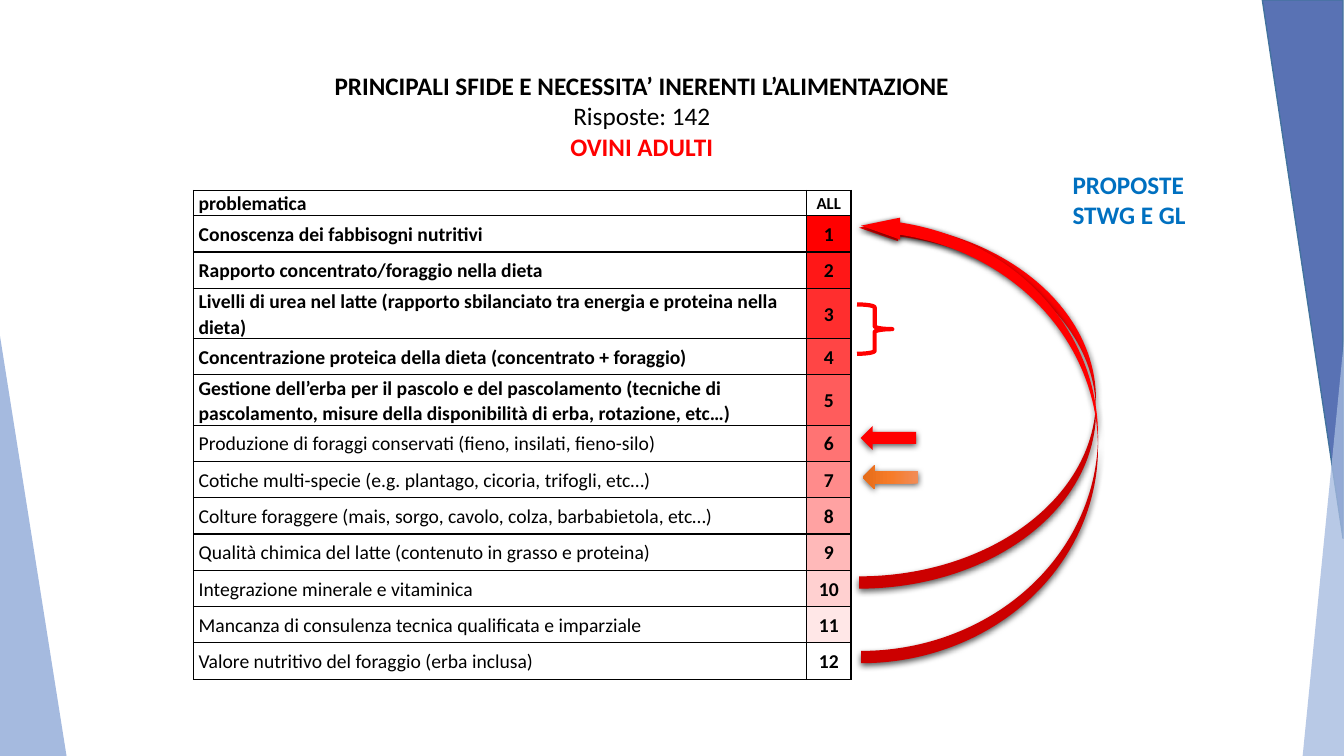
from dataclasses import dataclass
from typing import Optional

import pptx
import pptx.dml.color
import pptx.enum.shapes
import pptx.enum.text
import pptx.oxml
import pptx.oxml.ns
import pptx.util
from pptx.dml.color import RGBColor
from pptx.enum.shapes import MSO_SHAPE
from pptx.enum.text import PP_ALIGN
from pptx.util import Inches

BLACK = RGBColor(0x00, 0x00, 0x00)
RED = RGBColor(0xFF, 0x00, 0x00)
BLUE = RGBColor(0x00, 0x70, 0xC0)
PALE_BLUE = RGBColor(0xA5, 0xBA, 0xDF)
DEEP_BLUE = RGBColor(0x59, 0x72, 0xB4)
EDGE_BLUE = RGBColor(0x43, 0x73, 0x9E)
ORANGE_STOPS = (
    (0, RGBColor(0xF1, 0x8C, 0x57)),
    (50, RGBColor(0xF6, 0x7B, 0x28)),
    (100, RGBColor(0xE5, 0x6C, 0x19)),
)

FONT = "Calibri"
NAMESPACE = pptx.oxml.ns.nsdecls("a")
BOLD_PROBLEMS = 5
PROBLEMS = (
    "Conoscenza dei fabbisogni nutritivi",
    "Rapporto concentrato/foraggio nella dieta",
    "Livelli di urea nel latte (rapporto sbilanciato tra energia e proteina nella dieta)",
    "Concentrazione proteica della dieta (concentrato + foraggio)",
    "Gestione dell’erba per il pascolo e del pascolamento (tecniche di pascolamento, "
    "misure della disponibilità di erba, rotazione, etc…)",
    "Produzione di foraggi conservati (fieno, insilati, fieno-silo)",
    "Cotiche multi-specie (e.g. plantago, cicoria, trifogli, etc…)",
    "Colture foraggere (mais, sorgo, cavolo, colza, barbabietola, etc…)",
    "Qualità chimica del latte (contenuto in grasso e proteina)",
    "Integrazione minerale e vitaminica",
    "Mancanza di consulenza tecnica qualificata e imparziale",
    "Valore nutritivo del foraggio (erba inclusa)",
)


@dataclass(frozen=True)
class Figure:
    preset: MSO_SHAPE
    left: float
    top: float
    width: float
    height: float
    fill: Optional[RGBColor] = None
    gradient: tuple = ()
    opacity: int = 100
    line: Optional[RGBColor] = None
    line_width: float = 1
    rotation: int = 0
    flip: str = ""
    adjustments: tuple = ()
    shadow: bool = False


CURVE = (0.052, 0.093, 0.165)
SIDE_PANELS = (
    Figure(MSO_SHAPE.ISOSCELES_TRIANGLE, -0.01, 3.27, 0.67, 4.23, PALE_BLUE, adjustments=(0,)),
    Figure(MSO_SHAPE.ISOSCELES_TRIANGLE, 12.52, 0, 0.8, 5.34, DEEP_BLUE, line=EDGE_BLUE,
           rotation=180, adjustments=(0,)),
    Figure(MSO_SHAPE.ISOSCELES_TRIANGLE, 12.92, 3.27, 0.42, 4.23, PALE_BLUE, opacity=78,
           flip="flipH", adjustments=(0,)),
)
PROPOSAL_MARKS = (
    Figure(MSO_SHAPE.RIGHT_BRACE, 8.5, 3.02, 0.35, 0.49, line=RED, line_width=3),
    Figure(MSO_SHAPE.CURVED_LEFT_ARROW, 8.52, 2.15, 2.35, 3.69, RED, flip="flipV",
           adjustments=CURVE, shadow=True),
    Figure(MSO_SHAPE.DOWN_ARROW, 8.69, 4.07, 0.24, 0.55, RED, rotation=90, shadow=True),
    Figure(MSO_SHAPE.DOWN_ARROW, 8.71, 4.46, 0.24, 0.55, gradient=ORANGE_STOPS, rotation=90,
           shadow=True),
    Figure(MSO_SHAPE.CURVED_LEFT_ARROW, 8.54, 2.13, 2.35, 4.45, RED, flip="flipV",
           adjustments=CURVE, shadow=True),
)


def add_run(paragraph, text: str, *, size: float = 18, bold: bool = True,
            color: RGBColor = BLACK, align: Optional[PP_ALIGN] = None,
            spacing: Optional[float] = None) -> None:
    if align is not None:
        paragraph.alignment = align
    if spacing is not None:
        paragraph.line_spacing = spacing
    run = paragraph.add_run()
    run.text = text
    run.font.name = FONT
    run.font.size = pptx.util.Pt(size)
    run.font.bold = bold
    run.font.color.rgb = color


def add_text_box(slide, left: float, top: float, width: float, height: float):
    box = slide.shapes.add_textbox(Inches(left), Inches(top), Inches(width), Inches(height))
    box.text_frame.word_wrap = True
    box.text_frame.auto_size = pptx.enum.text.MSO_AUTO_SIZE.SHAPE_TO_FIT_TEXT
    return box.text_frame


def apply_gradient(shape, stops: tuple) -> None:
    shape.fill.gradient()
    current = shape.element.spPr.find(pptx.oxml.ns.qn("a:gradFill"))
    stop_list = "".join(
        f'<a:gs pos="{position * 1000}"><a:srgbClr val="{color}"/></a:gs>'
        for position, color in stops
    )
    replacement = pptx.oxml.parse_xml(
        f'<a:gradFill {NAMESPACE} rotWithShape="1"><a:gsLst>{stop_list}</a:gsLst>'
        '<a:lin ang="5400000" scaled="0"/></a:gradFill>'
    )
    shape.element.spPr.replace(current, replacement)


def draw_figure(slide, figure: Figure) -> None:
    shape = slide.shapes.add_shape(figure.preset, Inches(figure.left), Inches(figure.top),
                                   Inches(figure.width), Inches(figure.height))
    shape.rotation = figure.rotation
    for index, value in enumerate(figure.adjustments):
        shape.adjustments[index] = value
    if figure.flip:
        shape.element.spPr.xfrm.set(figure.flip, "1")
    if figure.gradient:
        apply_gradient(shape, figure.gradient)
    elif figure.fill is None:
        shape.fill.background()
    else:
        shape.fill.solid()
        shape.fill.fore_color.rgb = figure.fill
        if figure.opacity < 100:
            color = shape.element.spPr.find(".//" + pptx.oxml.ns.qn("a:srgbClr"))
            color.append(pptx.oxml.parse_xml(
                f'<a:alpha {NAMESPACE} val="{figure.opacity * 1000}"/>'))
    if figure.line is None:
        shape.line.fill.background()
    else:
        shape.line.color.rgb = figure.line
        shape.line.width = pptx.util.Pt(figure.line_width)
    shape.shadow.inherit = False
    if figure.shadow:
        effects = shape.element.spPr.find(pptx.oxml.ns.qn("a:effectLst"))
        effects.append(pptx.oxml.parse_xml(
            f'<a:outerShdw {NAMESPACE} blurRad="57150" dist="19050" dir="5400000" '
            'algn="ctr" rotWithShape="0"><a:srgbClr val="000000">'
            '<a:alpha val="63000"/></a:srgbClr></a:outerShdw>'))


def format_cell(cell, fill: Optional[RGBColor]) -> None:
    cell.margin_left = cell.margin_right = Inches(0.05)
    cell.margin_top = cell.margin_bottom = 0
    cell.vertical_anchor = pptx.enum.text.MSO_ANCHOR.MIDDLE
    properties = cell._tc.get_or_add_tcPr()
    for side in ("lnL", "lnR", "lnT", "lnB"):
        properties.append(pptx.oxml.parse_xml(
            f'<a:{side} {NAMESPACE} w="12700"><a:solidFill><a:srgbClr val="{BLACK}"/>'
            f'</a:solidFill></a:{side}>'))
    if fill is None:
        cell.fill.background()
    else:
        cell.fill.solid()
        cell.fill.fore_color.rgb = fill


def draw_ranking(slide) -> None:
    frame = slide.shapes.add_table(len(PROBLEMS) + 1, 2, Inches(1.92), Inches(1.89),
                                   Inches(6.53), Inches(4.86))
    table = frame.table
    table.first_row = table.horz_banding = False
    for column, width in zip(table.columns, (6.08, 0.44)):
        column.width = Inches(width)
    for rank, problem in enumerate(("problematica",) + PROBLEMS):
        table.rows[rank].height = Inches({0: 0.2, 5: 0.38}.get(rank, 0.36))
        tint = 255 * (rank - 1) // (len(PROBLEMS) - 1)
        fill = RGBColor(255, tint, tint) if rank else None
        problem_cell, rank_cell = table.cell(rank, 0), table.cell(rank, 1)
        format_cell(problem_cell, None)
        format_cell(rank_cell, fill)
        add_run(problem_cell.text_frame.paragraphs[0], problem, size=14,
                bold=rank <= BOLD_PROBLEMS, spacing=1.07)
        add_run(rank_cell.text_frame.paragraphs[0], str(rank) if rank else "ALL",
                size=14 if rank else 12, align=PP_ALIGN.CENTER, spacing=1.07)
    frame.height = Inches(4.86)


def main() -> None:
    presentation = pptx.Presentation()
    presentation.slide_width = Inches(13.33)
    presentation.slide_height = Inches(7.5)
    slide = presentation.slides.add_slide(presentation.slide_layouts[6])
    for panel in SIDE_PANELS:
        draw_figure(slide, panel)
    title = add_text_box(slide, 3.03, 0.65, 6.67, 1.01)
    heading = title.paragraphs[0]
    add_run(heading, "PRINCIPALI SFIDE E NECESSITA’ INERENTI L’ALIMENTAZIONE ",
            align=PP_ALIGN.CENTER)
    add_run(heading, "Risposte: 142", bold=False)
    add_run(title.add_paragraph(), "OVINI ADULTI", color=RED, align=PP_ALIGN.CENTER)
    draw_ranking(slide)
    for mark in PROPOSAL_MARKS:
        draw_figure(slide, mark)
    proposals = add_text_box(slide, 10.54, 1.63, 1.46, 0.71)
    add_run(proposals.paragraphs[0], "PROPOSTE STWG E GL", color=BLUE)
    presentation.save("out.pptx")


if __name__ == "__main__":
    main()
